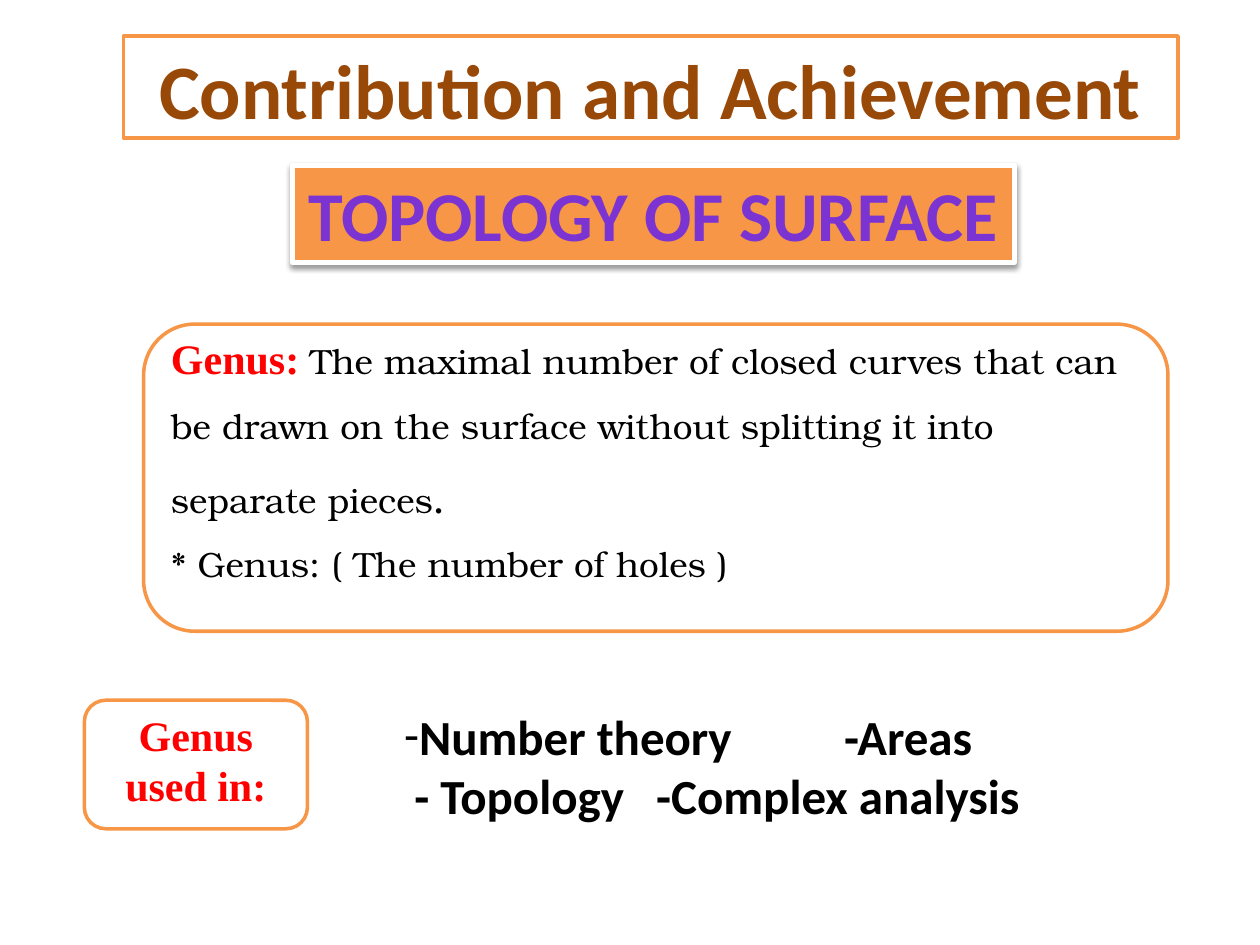
"""Build the slide on the topology of surfaces and the genus."""
import pptx
import pptx.util
import pptx.dml.color
import pptx.enum.shapes
import pptx.enum.text
import pptx.oxml

Inch = pptx.util.Inches
Pt = pptx.util.Pt
Kind = pptx.enum.shapes.MSO_SHAPE
Align = pptx.enum.text.PP_ALIGN
Anchor = pptx.enum.text.MSO_ANCHOR
NS = 'xmlns:a="http://schemas.openxmlformats.org/drawingml/2006/main"'

WIDE, HIGH = 10, 7.5
THEME = {
    "paper": "FFFFFF",
    "edge": "F79646",
    "title": {"name": "Calibri", "size": 44, "bold": True, "color": "984807"},
    "topic": {"name": "Calibri", "size": 40, "bold": True, "color": "7B34D2"},
    "term": {"name": "Times New Roman", "size": 24, "bold": True, "color": "FF0000"},
    "prose": {"name": "TeX Gyre Bonum", "size": 20, "bold": False, "color": "000000"},
    "stop": {"name": "TeX Gyre Bonum", "size": 24, "bold": False, "color": "000000"},
    "use": {"name": "Calibri", "size": 28, "bold": True, "color": "000000"},
}

TITLE = [[("Contribution and Achievement", "title")]]
TOPIC = [[("TOPOLOGY OF SURFACE", "topic")]]
GENUS = [
    [("Genus: ", "term"),
     ("The maximal number of closed curves that can be drawn on the surface "
      "without splitting it into separate pieces", "prose"),
     (".", "stop")],
    [("* Genus: ( The number of holes )", "prose")],
]
LABEL = [[("Genus used in:", "term")]]
USES = [
    {"mark": "-", "left": 0, "tab": 3.49, "text": "Number theory\t-Areas"},
    {"mark": None, "left": 0.08, "tab": 2.36, "text": "- Topology\t-Complex analysis"},
]

BOXES = [
    {"at": (0.098, 0.038, 0.837, 0.108), "kind": Kind.RECTANGLE, "rows": TITLE,
     "align": Align.CENTER},
    {"at": (0.232, 0.175, 0.573, 0.103), "kind": Kind.RECTANGLE, "rows": TOPIC,
     "align": Align.CENTER, "fill": "edge", "line": "paper", "width": 3,
     "wrap": False, "shade": True},
    {"at": (0.114, 0.343, 0.813, 0.325), "kind": Kind.ROUNDED_RECTANGLE,
     "rows": GENUS, "align": Align.LEFT, "space": 1.5, "top": -0.25},
    {"at": (0.067, 0.741, 0.177, 0.136), "kind": Kind.ROUNDED_RECTANGLE,
     "rows": LABEL, "align": Align.CENTER, "top": 0.02},
]
LIST = (0.311, 0.741, 0.591, 0.139)


def tint(code):
    return pptx.dml.color.RGBColor.from_string(code)


def place(at):
    return [Inch(part * side) for part, side in zip(at, (WIDE, HIGH) * 2)]


def style(font, key):
    look = THEME[key]
    values = {"name": look["name"], "size": Pt(look["size"]), "bold": look["bold"]}
    for name, value in values.items():
        setattr(font, name, value)
    font.color.rgb = tint(look["color"])


def setup(frame, wrap=True, top=0.05):
    values = {"word_wrap": wrap, "vertical_anchor": Anchor.TOP,
              "margin_top": Inch(top)}
    for name, value in values.items():
        setattr(frame, name, value)


def row(frame, spot):
    return frame.paragraphs[0] if spot == 0 else frame.add_paragraph()


def shade(shape):
    shape._element.spPr.find(pptx.oxml.ns.qn("a:effectLst")).append(
        pptx.oxml.parse_xml(
            f'<a:outerShdw {NS} blurRad="{Pt(3.1)}" dist="{Pt(1.6)}" dir="5400000" '
            'rotWithShape="0"><a:srgbClr val="000000"><a:alpha val="38000"/>'
            '</a:srgbClr></a:outerShdw>'))


def draw(slide, box):
    shape = slide.shapes.add_shape(box["kind"], *place(box["at"]))
    shape.fill.solid()
    shape.fill.fore_color.rgb = tint(THEME[box.get("fill", "paper")])
    shape.line.color.rgb = tint(THEME[box.get("line", "edge")])
    shape.line.width = Pt(box.get("width", 2))
    shape.shadow.inherit = False
    if box.get("shade"):
        shade(shape)
    frame = shape.text_frame
    setup(frame, box.get("wrap", True), box.get("top", 0.05))
    for spot, parts in enumerate(box["rows"]):
        para = row(frame, spot)
        para.alignment = box["align"]
        para.line_spacing = box.get("space", 1.0)
        for text, key in parts:
            run = para.add_run()
            run.text = text
            style(run.font, key)


def bullet(mark):
    if not mark:
        return [f"<a:buNone {NS}/>"]
    face = THEME["use"]["name"]
    return [f'<a:buFont {NS} typeface="{face}"/>', f'<a:buChar {NS} char="{mark}"/>']


def uses(slide):
    frame = slide.shapes.add_textbox(*place(LIST)).text_frame
    setup(frame)
    for spot, item in enumerate(USES):
        para = row(frame, spot)
        props = para._p.get_or_add_pPr()
        props.set("marL", "0")
        props.set("indent", str(Inch(item["left"])))
        tabs = (f'<a:tabLst {NS}><a:tab pos="{Inch(item["tab"])}" algn="l"/>'
                '</a:tabLst>')
        for part in bullet(item["mark"]) + [tabs]:
            props.append(pptx.oxml.parse_xml(part))
        run = para.add_run()
        run.text = item["text"]
        style(run.font, "use")


def main():
    deck = pptx.Presentation()
    deck.slide_width, deck.slide_height = Inch(WIDE), Inch(HIGH)
    slide = deck.slides.add_slide(deck.slide_layouts[6])
    for box in BOXES:
        draw(slide, box)
    uses(slide)
    deck.save("out.pptx")


if __name__ == "__main__":
    main()
